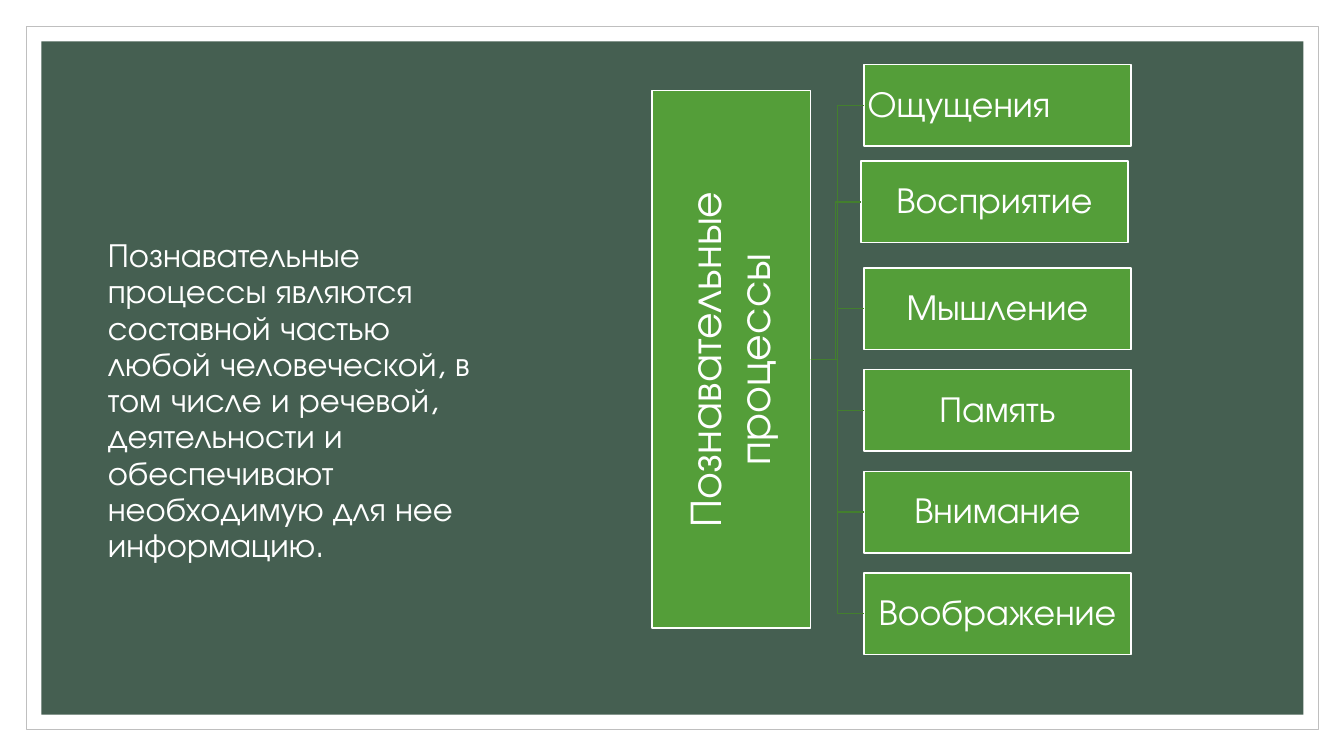
from dataclasses import dataclass

from lxml import etree
from pptx import Presentation
from pptx.dml.color import RGBColor
from pptx.enum.shapes import MSO_CONNECTOR, MSO_SHAPE
from pptx.enum.text import MSO_ANCHOR, MSO_AUTO_SIZE, PP_ALIGN
from pptx.oxml.ns import qn
from pptx.util import Inches, Pt

RECT = MSO_SHAPE.RECTANGLE
ELBOW = MSO_CONNECTOR.ELBOW
MIDDLE = MSO_ANCHOR.MIDDLE
NO_FIT = MSO_AUTO_SIZE.NONE
LEFT, CENTER = PP_ALIGN.LEFT, PP_ALIGN.CENTER
SIDE_LEFT, SIDE_RIGHT = 1, 3
WIDTH, HEIGHT = Inches(13.33), Inches(7.5)


@dataclass(frozen=True)
class Theme:
    font: str = "TeX Gyre Adventor"
    white: str = "FFFFFF"
    frame: str = "BFBFBF"
    panel: str = "455F51"
    box: str = "549E39"
    link: str = "437F2E"
    title_size: int = 24
    root_size: int = 32
    item_size: int = 26
    inset: float = 1.3


THEME = Theme()
TITLE = ("Познавательные процессы являются составной частью любой человеческой, "
         "в том числе и речевой, деятельности и обеспечивают необходимую "
         "для нее информацию.")
ROOT = "Познавательные процессы"
# Label, alignment, horizontal and vertical nudge in percent of the slide
PROCESSES = [
    ("Ощущения", LEFT, 0, 0),
    ("Восприятие", CENTER, -0.22, -0.67),
    ("Мышление", CENTER, 0, 0),
    ("Память", CENTER, 0, 0),
    ("Внимание", CENTER, 0, 0),
    ("Воображение", CENTER, 0, 0),
]
ITEM_LEFT, ITEM_TOP, ITEM_PITCH = 64.28, 8.53, 13.45
ITEM_WIDTH, ITEM_HEIGHT = 19.88, 10.8


def area(left, top, width, height):
    """Turn percentages of the slide into lengths."""
    return (int(WIDTH * left / 100), int(HEIGHT * top / 100),
            int(WIDTH * width / 100), int(HEIGHT * height / 100))


def rgb(color):
    return RGBColor.from_string(color)


def add_rect(slide, place, fill, line=None, weight=1):
    sp = slide.shapes.add_shape(RECT, *area(*place))
    sp.shadow.inherit = False
    sp.fill.solid()
    sp.fill.fore_color.rgb = rgb(fill)
    if line:
        sp.line.color.rgb = rgb(line)
        sp.line.width = Pt(weight)
    else:
        sp.line.fill.background()
    return sp


def write(sp, text, size, align):
    tf = sp.text_frame
    tf.text = text
    tf.word_wrap = True
    tf.auto_size = NO_FIT
    tf.vertical_anchor = MIDDLE
    p = tf.paragraphs[0]
    p.alignment = align
    p.line_spacing = 0.9
    p.space_before = Pt(0)
    font = p.runs[0].font
    font.name = THEME.font
    font.size = Pt(size)
    font.color.rgb = rgb(THEME.white)
    return tf


def add_box(slide, place, text, size, align=CENTER):
    sp = add_rect(slide, place, THEME.box, THEME.white)
    tf = write(sp, text, size, align)
    tf.margin_left = tf.margin_right = Pt(THEME.inset)
    tf.margin_top = tf.margin_bottom = Pt(THEME.inset)
    if align == LEFT:
        tf.margin_left = Pt(2 * THEME.inset)
    return sp


def link(slide, root, item):
    cx = slide.shapes.add_connector(ELBOW, 0, 0, 0, 0)
    cx.begin_connect(root, SIDE_RIGHT)
    cx.end_connect(item, SIDE_LEFT)
    cx.line.color.rgb = rgb(THEME.link)
    cx.line.width = Pt(1)
    etree.SubElement(cx._element.spPr, qn("a:effectLst"))


def place_title(slide):
    title = slide.shapes.title
    title.left, title.top, title.width, title.height = area(7.28, 40.93, 28.73, 29.2)
    tf = write(title, TITLE, THEME.title_size, LEFT)
    tf.margin_bottom = Inches(0.41)
    slide.shapes._spTree.append(title._element)  # in front of the panel


def add_tree(slide):
    root = add_box(slide, (48.53, 12, 11.78, 71.07), ROOT, THEME.root_size)
    root.text_frame._txBody.bodyPr.set("vert", "vert270")
    for row, (label, align, dx, dy) in enumerate(PROCESSES):
        place = (ITEM_LEFT + dx, ITEM_TOP + row * ITEM_PITCH + dy,
                 ITEM_WIDTH, ITEM_HEIGHT)
        item = add_box(slide, place, label, THEME.item_size, align)
        link(slide, root, item)


def main():
    prs = Presentation()
    prs.slide_width, prs.slide_height = WIDTH, HEIGHT
    slide = prs.slides.add_slide(prs.slide_layouts[5])
    add_rect(slide, (1.95, 3.47, 96.15, 93.07), THEME.white, THEME.frame, 0.5)
    add_rect(slide, (3.08, 5.47, 93.9, 89.07), THEME.panel)
    place_title(slide)
    add_tree(slide)
    prs.save("out.pptx")


if __name__ == "__main__":
    main()
